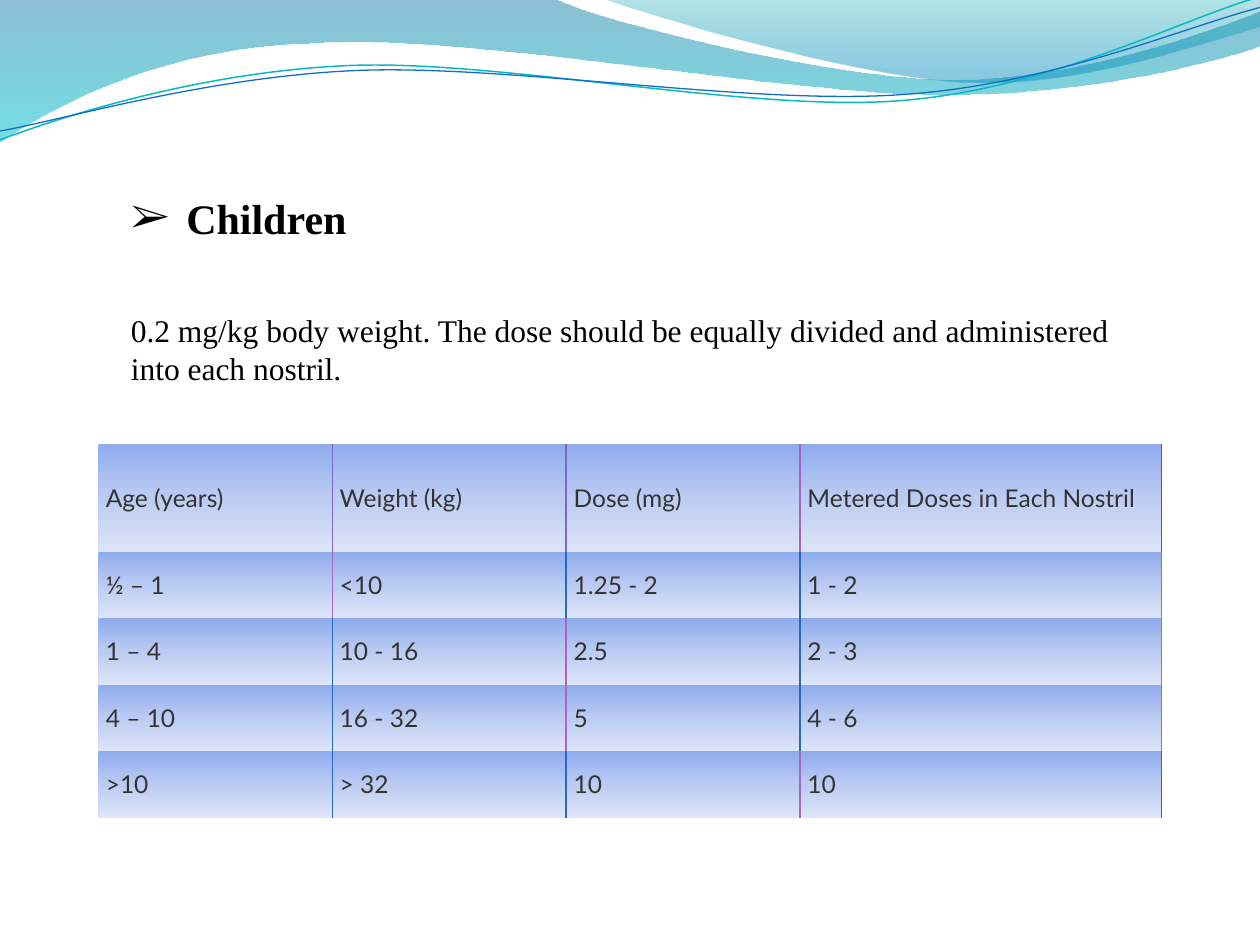
import math
from lxml import etree
from pptx import Presentation
from pptx import util as u
from pptx.dml.color import RGBColor
from pptx.enum import text
from pptx.oxml.ns import qn

BLACK = RGBColor(0x00, 0x00, 0x00)
DARK_GREY = RGBColor(0x33, 0x33, 0x33)
TEAL = RGBColor(0x0A, 0xB8, 0xBF)
BLUE = RGBColor(0x0F, 0x6F, 0xC6)
EDGE_BLUE = RGBColor(0x28, 0x69, 0xC2)
EDGE_PINK = RGBColor(0xA8, 0x66, 0xC2)
EDGE_PLUM = RGBColor(0xA8, 0x60, 0xC2)
EDGE_VIOLET = RGBColor(0x80, 0x68, 0xC2)
LEFT_WAVE = [(0, RGBColor(0x00, 0x74, 0xA1), 45), (100, RGBColor(0x00, 0xC6, 0xCF), 55)]
RIGHT_WAVE = [(0, RGBColor(0x00, 0xA1, 0xA9), 30), (80, RGBColor(0x00, 0x8B, 0xBF), 45)]
CELL_SHADE = [
    (0, RGBColor(0x8E, 0xAB, 0xEE), 100),
    (50, RGBColor(0xBB, 0xCB, 0xF2), 100),
    (100, RGBColor(0xDE, 0xE5, 0xF8), 100),
]
LINE_TILT = -2.7

DOSES = [
    ["Age (years)", "Weight (kg)", "Dose (mg)", "Metered Doses in Each Nostril"],
    ["½ – 1", "<10", "1.25 - 2", "1 - 2"],
    ["1 – 4", "10 - 16", "2.5", "2 - 3"],
    ["4 – 10", "16 - 32", "5", "4 - 6"],
    [">10", "> 32", "10", "10"],
]
MIDDLE_EDGES = [None, EDGE_BLUE, EDGE_PINK, EDGE_BLUE, EDGE_PINK]
EDGES = [
    [None, EDGE_VIOLET, EDGE_VIOLET, EDGE_PLUM, EDGE_BLUE],
    [None, EDGE_PINK, EDGE_BLUE, EDGE_BLUE, EDGE_PINK],
    MIDDLE_EDGES,
    MIDDLE_EDGES,
    [None, EDGE_BLUE, EDGE_BLUE, EDGE_PINK, EDGE_BLUE],
]


def shade(fill, parent, stops):
    """Fill from top to bottom with (position, colour, opacity) stops in percent."""
    fill.gradient()
    fill.gradient_angle = 270
    stop_list = parent.find(".//" + qn("a:gsLst"))
    stop_list.clear()
    for position, colour, opacity in stops:
        stop = etree.SubElement(stop_list, qn("a:gs"), pos=str(position * 1000))
        paint = etree.SubElement(stop, qn("a:srgbClr"), val=str(colour))
        if opacity < 100:
            etree.SubElement(paint, qn("a:alpha"), val=str(opacity * 1000))


def add_outline(page, box, start, segments, closed):
    """Draw straight (one point) and cubic (three point) segments in inches from the box."""
    points = [start, *(point for segment in segments for point in segment)]
    places = [(u.Inches(box[0] + x), u.Inches(box[1] + y)) for x, y in points]
    builder = page.shapes.build_freeform(*places[0], scale=1.0)
    builder.add_line_segments(places[1:], close=closed)
    shape = builder.convert_to_shape()
    shape.shadow.inherit = False
    steps = iter(list(shape._element.iter(qn("a:lnTo"))))
    for segment in segments:
        first, *others = [next(steps) for _ in segment]
        if others:
            first.tag = qn("a:cubicBezTo")
            for other in others:
                first.append(other[0])
                other.getparent().remove(other)
    return shape


def add_wave(page, box, start, segments, stops):
    """Add a closed translucent wave."""
    wave = add_outline(page, box, start, segments, True)
    shade(wave.fill, wave._element.spPr, stops)
    wave.line.fill.background()


def add_wave_line(page, box, centre, start, segments, colour, width):
    """Add a thin open curve, tilted about its centre."""
    angle = math.radians(-LINE_TILT)

    def level(point):
        across, down = point[0] - centre[0], point[1] - centre[1]
        return (
            centre[0] + across * math.cos(angle) - down * math.sin(angle),
            centre[1] + across * math.sin(angle) + down * math.cos(angle),
        )

    flat = [[level(point) for point in segment] for segment in segments]
    curve = add_outline(page, box, level(start), flat, False)
    curve.rotation = LINE_TILT
    curve.fill.background()
    curve.line.color.rgb = colour
    curve.line.width = u.Pt(width)


def add_header_waves(page, box):
    """Add the two waves and two curves along the top."""
    add_wave(page, box, (0, 0), [
        [(4.4, -0.01)],
        [(4.76, 0.17), (6.64, 0.63), (7.58, 0.63)],
        [(8.53, 0.63), (9.58, 0.26), (10, 0.09)],
        [(10.01, 0.36)],
        [(9.83, 0.44), (8.7, 0.76), (7.46, 0.75)],
        [(6.22, 0.75), (3.82, 0.28), (2.57, 0.34)],
        [(1.29, 0.36), (0.46, 0.83), (-0.01, 1.13)],
    ], LEFT_WAVE)
    add_wave(page, box, (4.79, -0.01), [
        [(5.09, 0.11), (6.82, 0.62), (7.69, 0.65)],
        [(8.56, 0.69), (9.61, 0.32), (10, 0.21)],
        [(10, 0)],
    ], RIGHT_WAVE)
    add_wave_line(page, box, (4.99, 0.57), (0, 1.11), [
        [(0.48, 0.93), (1.58, 0.57), (2.77, 0.52)],
        [(3.95, 0.47), (5.93, 0.89), (7.13, 0.8)],
        [(8.33, 0.71), (9.38, 0.15), (9.98, -0.02)],
    ], TEAL, 0.85)
    add_wave_line(page, box, (5, 0.59), (0, 1.04), [
        [(0.47, 0.96), (1.64, 0.61), (2.83, 0.56)],
        [(4.03, 0.51), (5.97, 0.84), (7.17, 0.75)],
        [(8.36, 0.67), (9.41, 0.21), (10, 0.06)],
    ], BLUE, 0.75)


def set_edges(cell, left, right):
    """Colour the upright sides of a cell and clear the level ones."""
    properties = cell._tc.get_or_add_tcPr()
    sides = [("L", left), ("R", right), ("T", None), ("B", None)]
    for index, (side, colour) in enumerate(sides):
        line = etree.Element(qn("a:ln" + side), w=str(u.Pt(0.75)))
        if colour is None:
            etree.SubElement(line, qn("a:noFill"))
        else:
            paint = etree.SubElement(line, qn("a:solidFill"))
            etree.SubElement(paint, qn("a:srgbClr"), val=str(colour))
        properties.insert(index, line)


def add_dose_table(page, box):
    """Add the table of doses by age and weight."""
    frame = page.shapes.add_table(len(DOSES), len(DOSES[0]), *map(u.Inches, box))
    table = frame.table
    table.first_row = table.horz_banding = False
    for column, width in zip(table.columns, [(box[2] - 2.87) / 3] * 3 + [2.87]):
        column.width = u.Inches(width)
    for row, height in zip(table.rows, [0.86] + [(box[3] - 0.86) / 4] * 4):
        row.height = u.Inches(height)
    for r, values in enumerate(DOSES):
        for c, value in enumerate(values):
            cell = table.cell(r, c)
            cell.text = value
            cell.vertical_anchor = text.MSO_ANCHOR.MIDDLE
            cell.margin_left = cell.margin_right = u.Inches(0.06)
            cell.margin_top = cell.margin_bottom = u.Inches(0.06)
            style(cell.text_frame.paragraphs[0], "Lato", 14, DARK_GREY)
            shade(cell.fill, cell._tc.tcPr, CELL_SHADE)
            set_edges(cell, EDGES[r][c], EDGES[r][c + 1])


def style(para, name, size, colour, bold=False):
    """Set the font of a paragraph."""
    para.font.name = name
    para.font.size = u.Pt(size)
    para.font.color.rgb = colour
    para.font.bold = bold


def add_text(page, box, words, size, bold=False):
    """Add a wrapped text box and return its paragraph."""
    frame = page.shapes.add_textbox(*map(u.Inches, box)).text_frame
    frame.word_wrap = True
    frame.auto_size = text.MSO_AUTO_SIZE.SHAPE_TO_FIT_TEXT
    para = frame.paragraphs[0]
    para.text = words
    style(para, "Times New Roman", size, BLACK, bold)
    return para


def add_heading(page, box):
    """Add the heading with its arrow bullet."""
    properties = add_text(page, box, "Children", 24, True)._p.get_or_add_pPr()
    properties.set("marL", str(u.Inches(0.44)))
    properties.set("indent", str(-u.Inches(0.44)))
    properties.insert(0, etree.Element(qn("a:buFont"), typeface="Times New Roman"))
    properties.insert(1, etree.Element(qn("a:buChar"), char="➢"))


def main():
    """Build the slide and save it."""
    deck = Presentation()
    deck.slide_width, deck.slide_height = u.Inches(10), u.Inches(7.5)
    page = deck.slides.add_slide(deck.slide_layouts[6])
    add_header_waves(page, (0, 0))
    add_dose_table(page, (0.78, 3.52, 8.44, 2.97))
    add_text(page, (0.94, 2.42, 8.13, 0.71), "0.2 mg/kg body weight. The dose should be "
             "equally divided and administered into each nostril.", 18)
    add_heading(page, (0.94, 1.48, 8.13, 0.5))
    deck.save("out.pptx")


if __name__ == "__main__":
    main()
